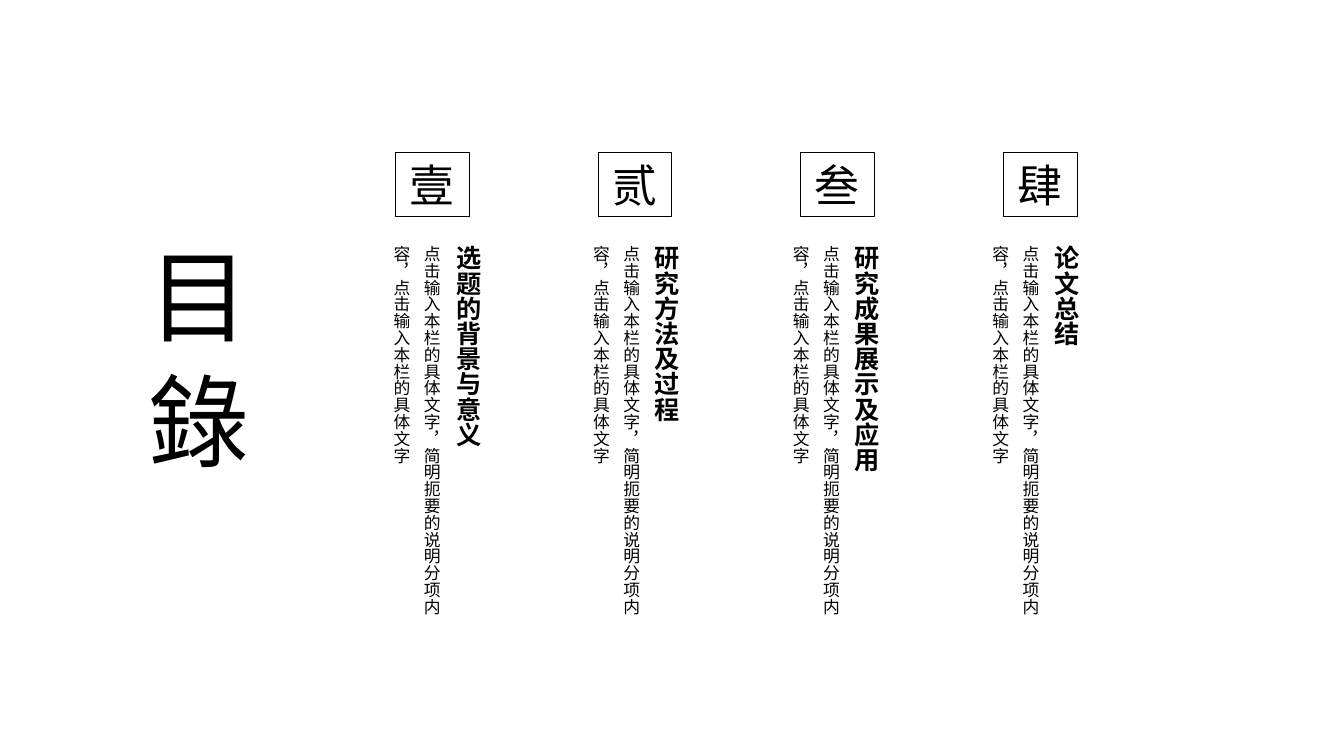
from lxml.etree import SubElement
from pptx import Presentation
from pptx.dml.color import RGBColor
from pptx.enum.shapes import MSO_SHAPE as Preset
from pptx.enum.text import MSO_ANCHOR as Anchor
from pptx.enum.text import MSO_AUTO_SIZE as AutoSize
from pptx.enum.text import PP_ALIGN as Align
from pptx.oxml.ns import qn
from pptx.util import Inches, Pt

COLORS = {"ink": "000000", "paper": "FFFFFF"}
SIMPLIFIED = "Noto Sans CJK SC"
TRADITIONAL = "Noto Sans CJK JP"

DETAIL = "点击输入本栏的具体文字，简明扼要的说明分项内容，点击输入本栏的具体文字"
# numeral, heading, heading offset, width, height, line spacing
CHAPTERS = [
    ("壹", "选题的背景与意义", 0.62, 0.5, 2.32, None),
    ("贰", "研究方法及过程", 0.6, 0.66, 2.32, 1.5),
    ("叁", "研究成果展示及应用", 0.6, 0.66, 2.79, 1.5),
    ("肆", "论文总结", 0.6, 0.66, 2.32, 1.5),
]
TEXT_TOP = 2.34
NUMERAL_LEFT, NUMERAL_STEP = 3.92, 2.01
DETAIL_LEFT, DETAIL_STEP = 3.72, 1.98


class ContentsPage:
    def __init__(self, deck):
        self.page = deck.slides.add_slide(deck.slide_layouts[6])
        fill = self.page.background.fill
        fill.solid()
        fill.fore_color.rgb = self.color("paper")

    def color(self, name):
        return RGBColor.from_string(COLORS[name])

    def add_text(self, box, text, size, font=SIMPLIFIED, bold=False,
                 align=None, spacing=None):
        frame = box.text_frame
        frame.word_wrap = True
        frame.auto_size = AutoSize.SHAPE_TO_FIT_TEXT
        para = frame.paragraphs[0]
        para.alignment = align
        para.line_spacing = spacing
        span = para.add_run()
        span.text = text
        span.font.size = Pt(size)
        span.font.bold = bold
        span.font.color.rgb = self.color("ink")
        span.font.name = font
        east_asian = SubElement(span.font._element, qn("a:ea"))
        east_asian.set("typeface", font)

    def numeral(self, left, text):
        box = self.page.shapes.add_shape(
            Preset.RECTANGLE, Inches(left), Inches(1.51),
            Inches(0.73), Inches(0.64))
        box.shadow.inherit = False
        box.fill.background()
        box.line.color.rgb = self.color("ink")
        box.line.width = Pt(0.25)
        box.text_frame.vertical_anchor = Anchor.MIDDLE
        self.add_text(box, text, 32, align=Align.CENTER)

    def vertical_text(self, left, width, height, text, size, **style):
        box = self.page.shapes.add_textbox(
            Inches(left), Inches(TEXT_TOP), Inches(width), Inches(height))
        self.add_text(box, text, size, **style)
        box.text_frame._txBody.bodyPr.set("vert", "eaVert")


def main():
    deck = Presentation()
    deck.slide_width = Inches(13.33)
    deck.slide_height = Inches(7.5)
    contents = ContentsPage(deck)

    for index, chapter in enumerate(CHAPTERS):
        numeral, heading, offset, width, height, spacing = chapter
        contents.numeral(NUMERAL_LEFT + index * NUMERAL_STEP, numeral)
        left = DETAIL_LEFT + index * DETAIL_STEP
        contents.vertical_text(left + offset, width, height, heading, 18,
                               bold=True, spacing=spacing)
        contents.vertical_text(left, 0.81, 3.96, DETAIL, 12, spacing=1.5)

    contents.vertical_text(1.18, 1.41, 3.14, "目 錄", 72,
                           font=TRADITIONAL, align=Align.CENTER)
    deck.save("out.pptx")


if __name__ == "__main__":
    main()
